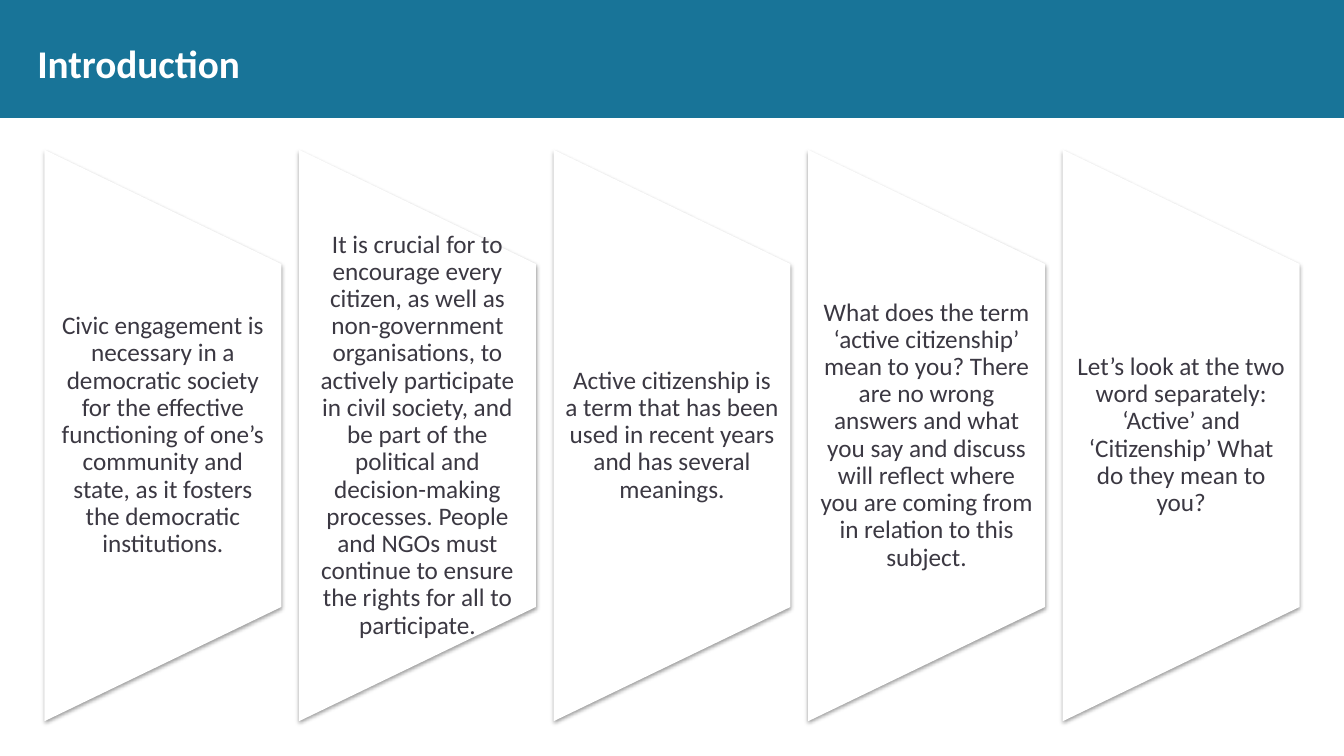
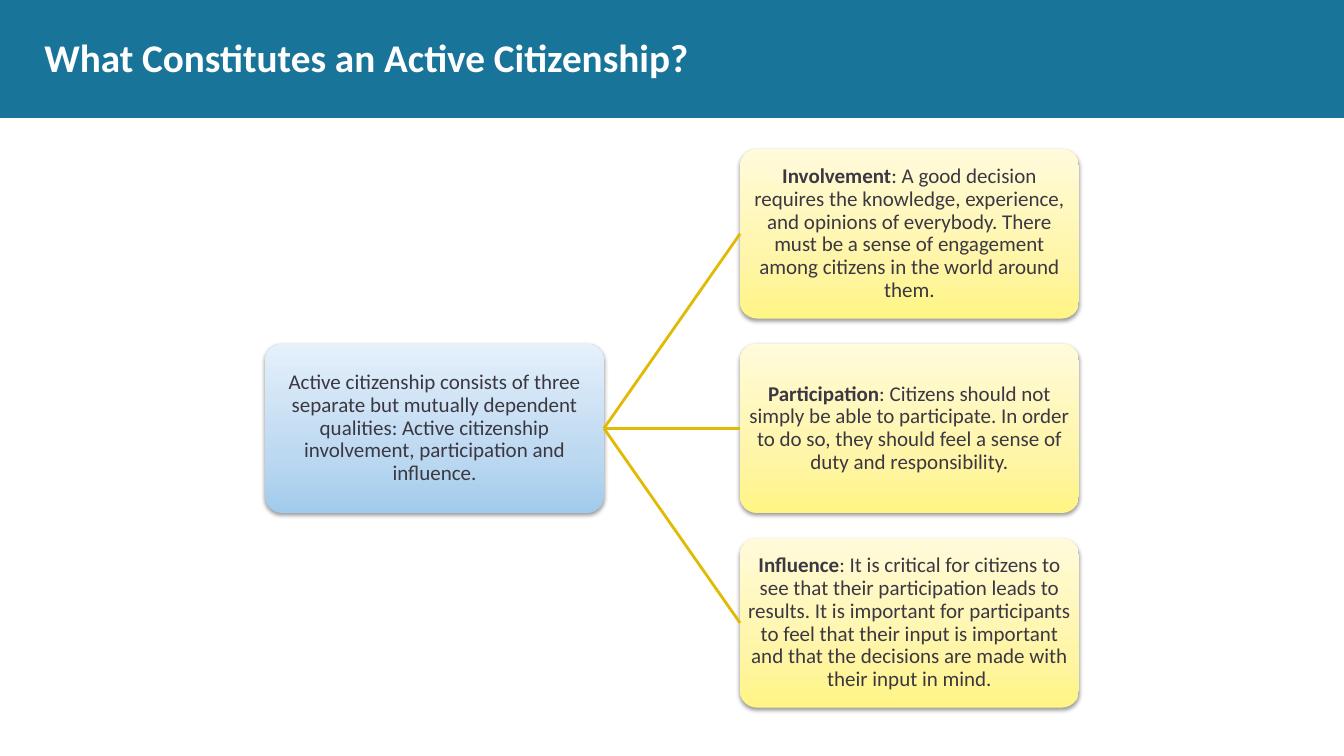
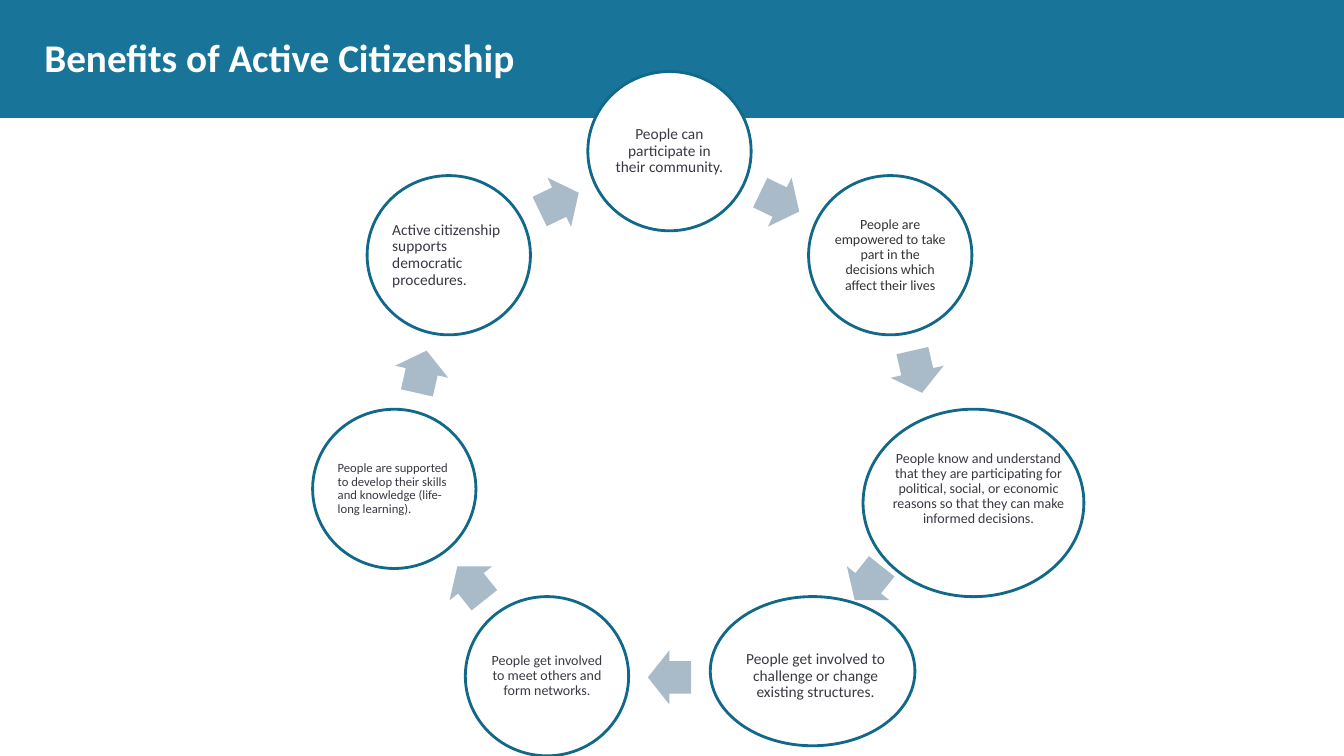
from copy import deepcopy
from math import cos, radians, sin

from lxml.etree import SubElement
from pptx import Presentation
from pptx.dml.color import RGBColor
from pptx.enum.shapes import MSO_CONNECTOR as Connector, MSO_SHAPE as Shape
from pptx.enum.text import MSO_ANCHOR as Anchor, PP_ALIGN as Align
from pptx.oxml.ns import qn
from pptx.util import Inches, Pt

COLORS = {
    "band": "187498", "white": "FFFFFF", "text": "3B3842", "dark": "333333",
    "link": "E0BA04", "ring": "126889", "arrow": "A9BBC9",
}
COLORS = {name: RGBColor.from_string(value) for name, value in COLORS.items()}
BLUE_STOPS = [(0, "A1CBEC"), (0.35, "BDD9F1"), (1, "E5F0FA")]
YELLOW_STOPS = [(0, "FFF584"), (0.35, "FFF5A9"), (1, "FFFBDB")]

deck = Presentation()
deck.slide_width, deck.slide_height = Inches(13.33), Inches(7.5)


def set_text(shape, spans, size, color="text", align=Align.CENTER,
             spacing=0.9, side=0.01, edge=0.01):
    """Fill a shape with one paragraph of (text, bold) spans."""
    frame = shape.text_frame
    frame.word_wrap = True
    frame.vertical_anchor = Anchor.MIDDLE
    frame.margin_left = frame.margin_right = Inches(side)
    frame.margin_top = frame.margin_bottom = Inches(edge)
    para = frame.paragraphs[0]
    para.alignment, para.line_spacing = align, spacing
    para.font.name, para.font.size = "Calibri", Pt(size)
    para.font.color.rgb = COLORS[color]
    for text, bold in spans:
        span = para.add_run()
        span.text = text
        span.font.name, span.font.size = "Calibri", Pt(size)
        span.font.color.rgb = COLORS[color]
        span.font.bold = bold


def add_page(title, left=0.44, top=0.19, width=12.46, height=0.74):
    """Add a slide with the blue band and its title."""
    page = deck.slides.add_slide(deck.slide_layouts[6])
    band = page.shapes.add_shape(Shape.RECTANGLE, 0, 0, deck.slide_width, Inches(1.17))
    band.shadow.inherit = False
    band.fill.solid()
    band.fill.fore_color.rgb = COLORS["band"]
    band.line.fill.background()
    box = page.shapes.add_textbox(Inches(left), Inches(top), Inches(width), Inches(height))
    set_text(box, [(title, True)], 28, "white", Align.LEFT, 1, 0, 0)
    return page


raised = []  # shapes that get a soft shadow

# Introduction
page = add_page("Introduction", 0.37, 0.33, 12.59, 0.59)
statements = [
    "Civic engagement is necessary in a democratic society for the effective "
    "functioning of one’s community and state, as it fosters the democratic institutions.",
    "It is crucial for to encourage every citizen, as well as non-government "
    "organisations, to actively participate in civil society, and be part of the "
    "political and decision-making processes. People and NGOs must continue to ensure "
    "the rights for all to participate.",
    "Active citizenship is a term that has been used in recent years and has several meanings.",
    "What does the term ‘active citizenship’ mean to you? There are no wrong answers and "
    "what you say and discuss will reflect where you are coming from in relation to this subject.",
    "Let’s look at the two word separately: ‘Active’ and ‘Citizenship’ What do they mean to you?",
]
panel_width, panel_height, panel_middle = 2.35, 5.67, 4.32
for index, statement in enumerate(statements):
    left = 0.44 + 2.525 * index
    panel = page.shapes.add_shape(
        Shape.FLOWCHART_MANUAL_OPERATION,
        Inches(left + (panel_width - panel_height) / 2),
        Inches(panel_middle - panel_width / 2),
        Inches(panel_height), Inches(panel_width))
    panel.rotation = 270
    panel.fill.solid()
    panel.fill.fore_color.rgb = COLORS["white"]
    raised.append(panel)
    box = page.shapes.add_textbox(Inches(left), Inches(2.62), Inches(panel_width), Inches(3.4))
    set_text(box, [(statement, False)], 18, side=0.11, edge=0)

# Qualities of active citizenship
page = add_page("What Constitutes an Active Citizenship?")
cards = [
    (2.63, 3.41, BLUE_STOPS, [
        ("Active citizenship consists of three separate but mutually dependent qualities: "
         "Active citizenship involvement, participation and influence.", False)]),
    (7.34, 1.48, YELLOW_STOPS, [
        ("Involvement", True),
        (": A good decision requires the knowledge, experience, and opinions of everybody. "
         "There must be a sense of engagement among citizens in the world around them.", False)]),
    (7.34, 3.41, YELLOW_STOPS, [
        ("Participation", True),
        (": Citizens should not simply be able to participate. In order to do so, they "
         "should feel a sense of duty and responsibility.", False)]),
    (7.34, 5.34, YELLOW_STOPS, [
        ("Influence", True),
        (": It is critical for citizens to see that their participation leads to results. "
         "It is important for participants to feel that their input is important and that "
         "the decisions are made with their input in mind.", False)]),
]
root = None
for left, top, stops, spans in cards:
    card = page.shapes.add_shape(
        Shape.ROUNDED_RECTANGLE, Inches(left), Inches(top), Inches(3.36), Inches(1.68))
    card.adjustments[0] = 0.1
    card.fill.gradient()
    card.fill.gradient_angle = 90
    stop_list = card._element.spPr.find(".//" + qn("a:gsLst"))
    stop_list.append(deepcopy(stop_list[-1]))
    for stop, (position, color) in zip(card.fill.gradient_stops, stops):
        stop.position = position
        stop.color.rgb = RGBColor.from_string(color)
    set_text(card, spans, 15)
    raised.append(card)
    if root is None:
        root = card
        continue
    link = page.shapes.add_connector(Connector.STRAIGHT, 0, 0, 0, 0)
    link.begin_connect(root, 3)
    link.end_connect(card, 1)
    link.line.color.rgb = COLORS["link"]
    link.line.width = Pt(2)
    SubElement(link._element.spPr, qn("a:effectLst"))

for shape in raised:
    shape.line.fill.background()
    shape.shadow.inherit = False
    effects = shape._element.spPr.find(qn("a:effectLst"))
    shadow = SubElement(effects, qn("a:outerShdw"), blurRad=str(Pt(3.1)), dist=str(Pt(1.6)),
                        dir="5400000", rotWithShape="0")
    black = SubElement(shadow, qn("a:srgbClr"), val="000000")
    SubElement(black, qn("a:alpha"), val="38000")

# Cycle of benefits: text, size, colour, alignment, ellipse width and height, text width
page = add_page("Benefits of Active Citizenship")
benefits = [
    ("People can participate in their community.",
     11, "text", Align.CENTER, 1.62, 1.58, 1.14),
    ("People are empowered to take part in the decisions which affect their lives",
     10, "dark", Align.CENTER, 1.62, 1.58, 1.14),
    ("People know and understand that they are participating for political, social, or "
     "economic reasons so that they can make informed decisions.",
     10, "text", Align.CENTER, 2.19, 1.86, 1.81),
    ("People get involved to challenge or change existing structures.",
     11, "text", Align.CENTER, 2.03, 1.48, 1.61),
    ("People get involved to meet others and form networks.",
     10, "text", Align.CENTER, 1.62, 1.58, 1.14),
    ("People are supported to develop their skills and knowledge (life-long learning).",
     9, "text", Align.LEFT, 1.62, 1.58, 1.14),
    ("Active citizenship supports democratic procedures.",
     11, "text", Align.LEFT, 1.62, 1.58, 1.14),
]
center_x, center_y = 6.64, 4.24
arrow_width, arrow_height = 0.43, 0.54
step = 360 / len(benefits)
for index, (text, size, color, align, width, height, text_width) in enumerate(benefits):
    angle = radians(step * index)
    left = center_x + 2.8 * sin(angle) - 0.81
    top = center_y - 2.74 * cos(angle) - 0.79
    ellipse = page.shapes.add_shape(
        Shape.OVAL, Inches(left), Inches(top), Inches(width), Inches(height))
    ellipse.shadow.inherit = False
    ellipse.fill.solid()
    ellipse.fill.fore_color.rgb = COLORS["white"]
    ellipse.line.color.rgb = COLORS["ring"]
    ellipse.line.width = Pt(2)
    box = page.shapes.add_textbox(
        Inches(left + 0.24), Inches(top + 0.23), Inches(text_width), Inches(1.12))
    set_text(box, [(text, False)], size, color, align)

    turn = step * (index + 0.5)
    arrow = page.shapes.add_shape(
        Shape.RIGHT_ARROW,
        Inches(center_x + 2.52 * sin(radians(turn)) - arrow_width / 2),
        Inches(center_y - 2.48 * cos(radians(turn)) - arrow_height / 2),
        Inches(arrow_width), Inches(arrow_height))
    arrow.adjustments[0] = 0.6
    arrow.rotation = turn
    arrow.shadow.inherit = False
    arrow.fill.solid()
    arrow.fill.fore_color.rgb = COLORS["arrow"]
    arrow.line.fill.background()

deck.save("out.pptx")
